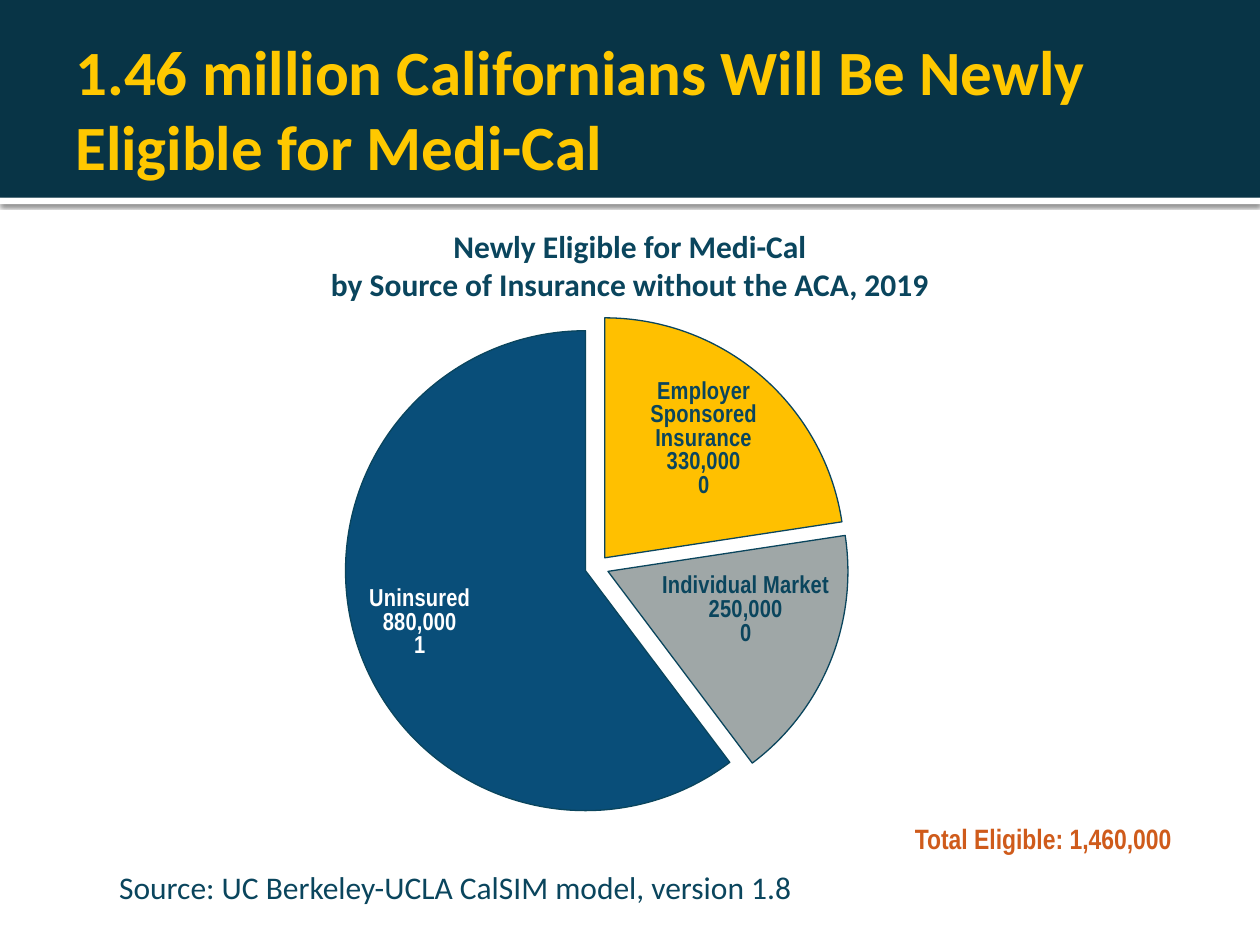
from lxml import etree
from pptx import Presentation
from pptx.chart.data import CategoryChartData
from pptx.dml.color import RGBColor
from pptx.enum.chart import XL_CHART_TYPE as ChartType, XL_LABEL_POSITION as LabelPos
from pptx.enum.shapes import MSO_SHAPE as Shape
from pptx.enum.text import MSO_ANCHOR as Anchor, PP_ALIGN as Align
from pptx.oxml import parse_xml
from pptx.oxml.ns import qn
from pptx.util import Inches, Pt

NAVY, TEAL, GOLD, ORANGE, WHITE = "083446", "0A455D", "FFC800", "CF5B1B", "FFFFFF"
SOURCES = [
    ("Employer Sponsored Insurance", 330000, "FFC000"),
    ("Individual Market", 250000, "9FA7A7"),
    ("Uninsured", 880000, "094E79"),
]
A_NS = "http://schemas.openxmlformats.org/drawingml/2006/main"


def color(hex_code):
    return RGBColor.from_string(hex_code)


def style_font(font, name, size, hex_code, bold=False):
    font.name, font.size, font.bold = name, Pt(size), bold
    font.color.rgb = color(hex_code)


def add_band(slide, left, top, width, height, hex_code):
    band = slide.shapes.add_shape(
        Shape.RECTANGLE, Inches(left), Inches(top), Inches(width), Inches(height))
    band.shadow.inherit = False
    band.fill.solid()
    band.fill.fore_color.rgb = color(hex_code)
    band.line.fill.background()
    return band


def add_text(slide, box, lines, size, hex_code, font="Calibri", bold=False,
             align=Align.CENTER, wrap=True):
    frame = slide.shapes.add_textbox(*map(Inches, box)).text_frame
    frame.word_wrap = wrap
    frame.text = "\n".join(lines)
    for paragraph in frame.paragraphs:
        paragraph.alignment = align
        style_font(paragraph.font, font, size, hex_code, bold)
    return frame


def add_header(slide, left, top, width, height):
    # White rule with a soft shadow below the navy band
    rule = add_band(slide, left, top + height, width, 0.05, WHITE)
    effects = rule._element.spPr.find(qn("a:effectLst"))
    effects.append(parse_xml(
        f'<a:outerShdw xmlns:a="{A_NS}" blurRad="{Pt(2.5)}" dist="{Pt(0.8)}" '
        'dir="5400000" algn="tl" rotWithShape="0"><a:srgbClr val="000000">'
        '<a:alpha val="60000"/></a:srgbClr></a:outerShdw>'))
    add_band(slide, left, top, width, height, NAVY)
    title = add_text(
        slide, (left + 0.5, top + 0.17, width - 1, 1.37),
        ["1.46 million Californians Will Be Newly Eligible for Medi-Cal"],
        36, GOLD, bold=True, align=Align.LEFT)
    title.vertical_anchor = Anchor.MIDDLE
    title.margin_right = Inches(0.05)


def show_label_parts(labels):
    """Show category, value and percentage, each on its own line."""
    for part in ("c:showVal", "c:showCatName", "c:showPercent"):
        labels.find(qn(part)).set("val", "1")
    separator = etree.Element(qn("c:separator"))
    separator.text = "\n"
    labels.find(qn("c:showPercent")).getparent()
    last_flag = labels.find(qn("c:showBubbleSize"))
    if last_flag is None:
        last_flag = labels.find(qn("c:showPercent"))
    last_flag.addnext(separator)


def set_plot_layout(chart, x, y, width, height):
    plot_area = chart._chartSpace.chart.plotArea
    for old in plot_area.findall(qn("c:layout")):
        plot_area.remove(old)
    layout = etree.Element(qn("c:layout"))
    manual = etree.SubElement(layout, qn("c:manualLayout"))
    settings = {"layoutTarget": "inner", "xMode": "edge", "yMode": "edge",
                "x": x, "y": y, "w": width, "h": height}
    for tag, value in settings.items():
        etree.SubElement(manual, qn(f"c:{tag}")).set("val", str(value))
    plot_area.insert(0, layout)


def add_insurance_pie(slide, left, top, width, height):
    data = CategoryChartData(number_format="#,##0")
    data.categories = [name for name, _, _ in SOURCES]
    data.add_series("Series 1", [people for _, people, _ in SOURCES])
    chart = slide.shapes.add_chart(
        ChartType.PIE, Inches(left), Inches(top), Inches(width), Inches(height), data).chart
    chart.has_legend = chart.has_title = False
    style_font(chart.font, "Arial Narrow", 10, TEAL)
    set_plot_layout(chart, 0.15, 0, 0.6, 1)
    chart.plots[0].vary_by_categories = True

    series = chart.plots[0].series[0]
    explosion = etree.Element(qn("c:explosion"))
    explosion.set("val", "5")
    series._element.find(qn("c:tx")).addnext(explosion)
    for index, (_, _, hex_code) in enumerate(SOURCES):
        slice_format = series.points[index].format
        slice_format.fill.solid()
        slice_format.fill.fore_color.rgb = color(hex_code)
        slice_format.line.color.rgb = color(TEAL)
        slice_format.line.width = Pt(0.75)

    # Labels: white on the dark Uninsured slice, teal elsewhere
    labels = series.data_labels
    labels.number_format, labels.number_format_is_linked = "#,##0", False
    labels.position = LabelPos.BEST_FIT
    style_font(labels.font, "Arial Narrow", 14, TEAL, bold=True)
    show_label_parts(labels._element)
    uninsured = series.points[2].data_label
    style_font(uninsured.font, "Arial Narrow", 14, WHITE, bold=True)
    uninsured.position = LabelPos.BEST_FIT
    show_label_parts(labels._element.find(qn("c:dLbl")))


def add_notes_below(slide, left, top):
    add_text(slide, (left, top + 0.37, 6.17, 0.42),
             ["Source: UC Berkeley-UCLA CalSIM model, version 1.8"], 18, TEAL)
    add_text(slide, (left + 6.62, top, 2.26, 0.37), ["Total Eligible: 1,460,000"],
             16, ORANGE, font="Arial Narrow", bold=True, wrap=False)


def main():
    deck = Presentation()
    deck.slide_width, deck.slide_height = Inches(10), Inches(7.5)
    slide = deck.slides.add_slide(deck.slide_layouts[6])
    add_header(slide, 0, 0, 10, 1.57)
    add_insurance_pie(slide, 1.25, 2.5, 7.75, 4)
    add_text(slide, (0.25, 1.75, 9.5, 0.71),
             ["Newly Eligible for Medi-Cal", "by Source of Insurance without the ACA, 2019"],
             18, TEAL, bold=True)
    add_notes_below(slide, 0.53, 6.47)
    deck.save("out.pptx")


if __name__ == "__main__":
    main()
